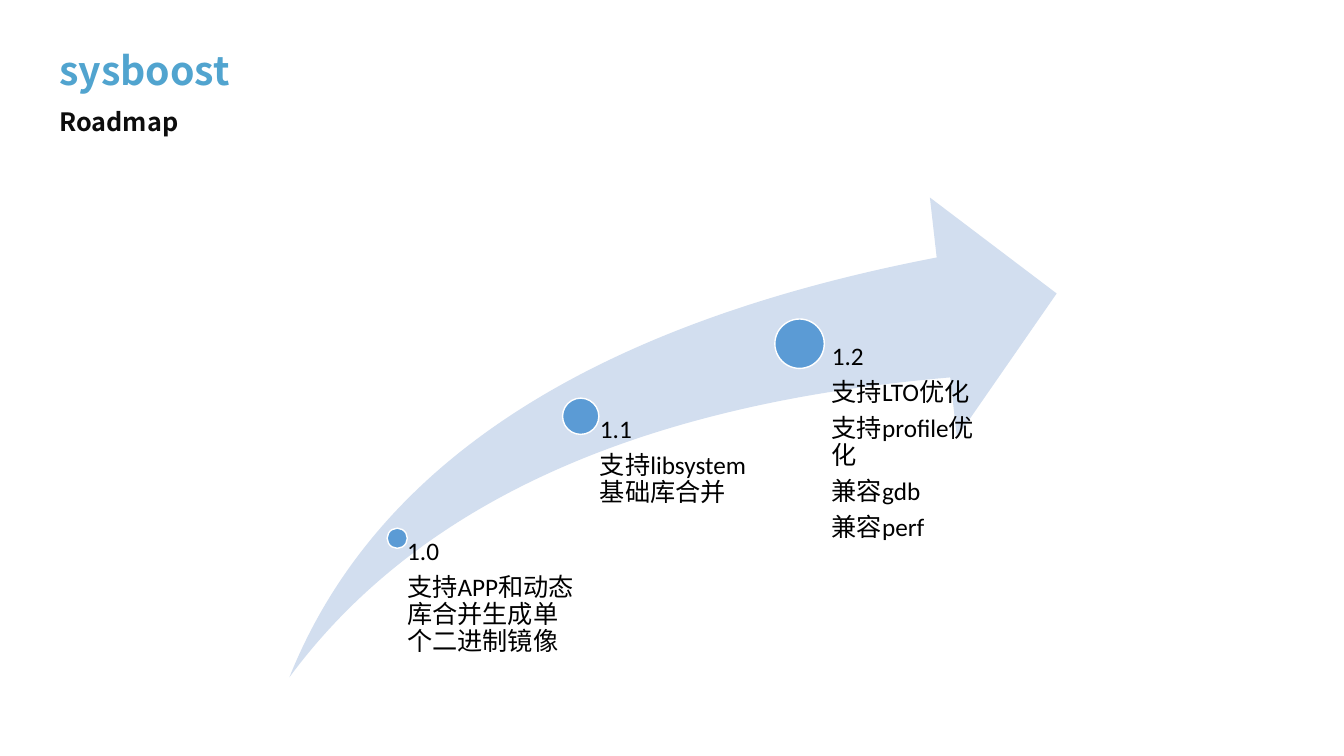
from pptx import Presentation
from pptx import util as u
from pptx.dml import color
from pptx.enum import shapes, text

HEADING_FONT = "Noto Sans CJK SC"
MILESTONES = [
    (3.94, 5.34, 0.20, 1.77, 0.10, ["1.0", "支持APP和动态库合并生成单个二进制镜像"]),
    (5.76, 4.13, 0.36, 1.83, 0.19, ["1.1", "支持libsystem基础库合并"]),
    (7.93, 3.41, 0.49, 1.77, 0.32,
     ["1.2", "支持LTO优化", "支持profile优化", "兼容gdb", "兼容perf"]),
]
TEXT_BOTTOM = 6.72


def rgb(value):
    return color.RGBColor.from_string(value)


class RoadmapSlide:
    """Draws styled elements on the current slide."""

    def __init__(self, deck):
        self.slide = deck.slides.add_slide(deck.slide_layouts[0])

    def heading(self, index, place, words, size, hue, anchor):
        box = self.slide.placeholders[index]
        box.left, box.top, box.width, box.height = map(u.Inches, place)
        box.text_frame.auto_size = text.MSO_AUTO_SIZE.NONE
        box.text_frame.vertical_anchor = anchor
        self.fill_text(box.text_frame, [words], size, hue, HEADING_FONT, True)

    def fill_text(self, frame, lines, size, hue, font, bold=False, after=0):
        frame.word_wrap = True
        for number, line in enumerate(lines):
            para = frame.paragraphs[0] if number == 0 else frame.add_paragraph()
            para.text = line
            para.alignment = text.PP_ALIGN.LEFT
            para.line_spacing = 0.9
            para.space_before = u.Pt(0)
            para.space_after = u.Pt(after)
            para.font.name = font
            para.font.size = u.Pt(size)
            para.font.bold = bold
            para.font.color.rgb = rgb(hue)

    def shape(self, kind, place, fill, line=None):
        shape = self.slide.shapes.add_shape(kind, *map(u.Inches, place))
        shape.shadow.inherit = False
        shape.fill.solid()
        shape.fill.fore_color.rgb = rgb(fill)
        if line:
            shape.line.color.rgb = rgb(line)
            shape.line.width = u.Pt(1)
        else:
            shape.line.fill.background()
        return shape

    def milestone(self, x, y, diameter, width, inset, lines):
        dot = (x - diameter / 2, y - diameter / 2, diameter, diameter)
        self.shape(shapes.MSO_SHAPE.OVAL, dot, "5B9BD5", "FFFFFF")
        place = (x, y, width, TEXT_BOTTOM - y)
        frame = self.slide.shapes.add_textbox(*map(u.Inches, place)).text_frame
        frame.margin_left = u.Inches(inset)
        frame.margin_top = frame.margin_right = frame.margin_bottom = 0
        self.fill_text(frame, lines, 18, "000000", "Calibri", after=6.3)


def main():
    deck = Presentation()
    deck.slide_width, deck.slide_height = u.Inches(13.33), u.Inches(7.5)
    page = RoadmapSlide(deck)
    page.heading(0, (0.49, 0.37, 12.38, 0.71), "sysboost", 28, "51A4CF",
                 text.MSO_ANCHOR.MIDDLE)
    page.heading(1, (0.49, 1.04, 12.38, 0.55), "Roadmap", 18, "0D0D0D",
                 text.MSO_ANCHOR.TOP)
    arrow = page.shape(shapes.MSO_SHAPE.SWOOSH_ARROW,
                       (2.87, 1.96, 7.61, 4.76), "D2DEEF")
    arrow.adjustments[0] = arrow.adjustments[1] = 0.25
    for milestone in MILESTONES:
        page.milestone(*milestone)
    deck.save("out.pptx")


if __name__ == "__main__":
    main()
